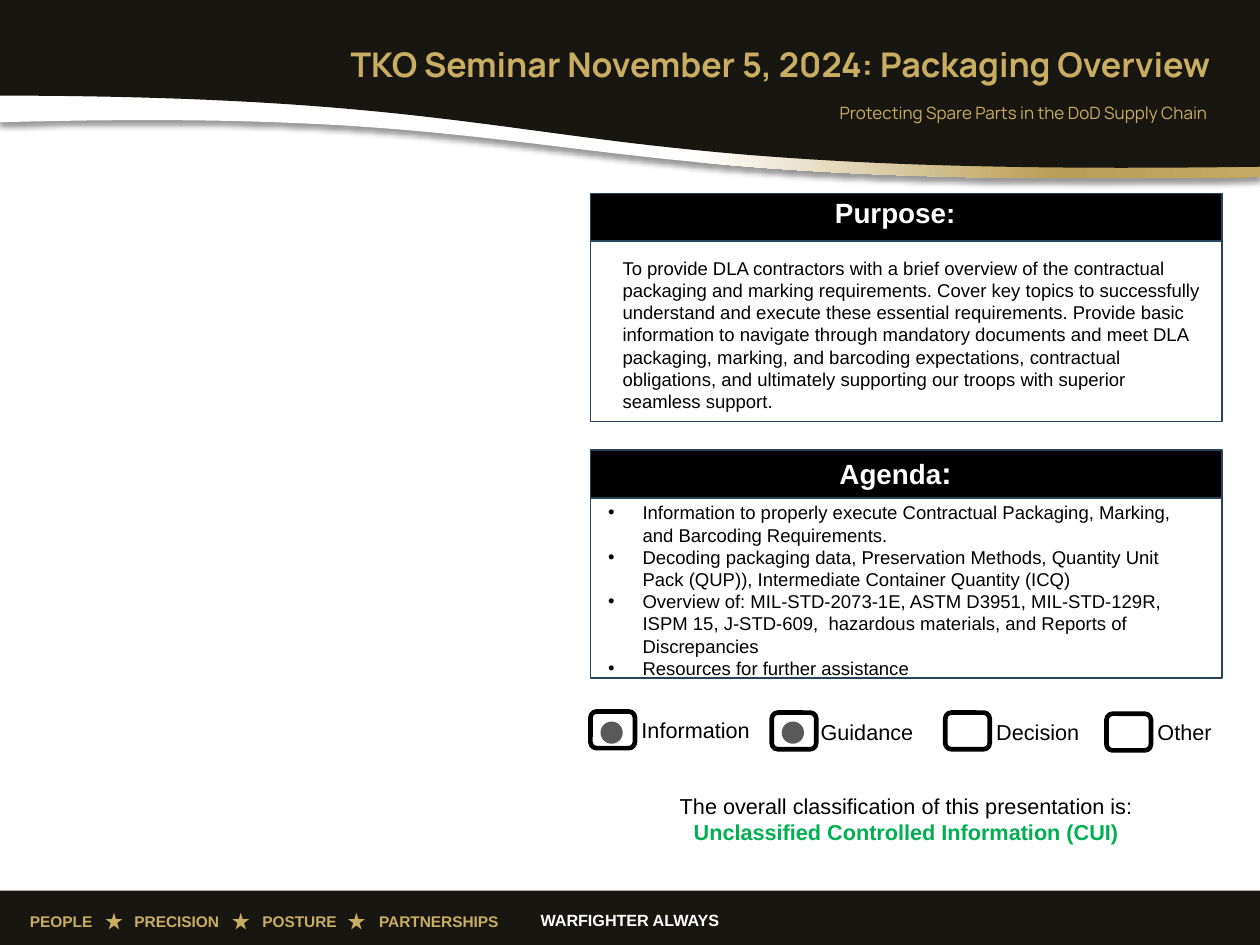
import copy

import lxml.etree
import pptx
import pptx.dml.color
import pptx.enum.shapes
import pptx.enum.text
import pptx.oxml.ns
import pptx.util

Inches = pptx.util.Inches
Kind = pptx.enum.shapes.MSO_SHAPE
Align = pptx.enum.text.PP_ALIGN
Anchor = pptx.enum.text.MSO_ANCHOR
qn = pptx.oxml.ns.qn

WIDE, HIGH = 11.33, 8.5
GOLD, DARK, NAVY = "C9AD62", "171610", "28445D"
PANEL_X, PANEL_W = 5.31, 5.68

PURPOSE = (
    "To provide DLA contractors with a brief overview of the contractual packaging "
    "and marking requirements. Cover key topics to successfully understand and execute "
    "these essential requirements. Provide basic information to navigate through "
    "mandatory documents and meet DLA packaging, marking, and barcoding expectations, "
    "contractual obligations, and ultimately supporting our troops with superior "
    "seamless support."
)
AGENDA = (
    "Information to properly execute Contractual Packaging, Marking, and Barcoding "
    "Requirements.",
    "Decoding packaging data, Preservation Methods, Quantity Unit Pack (QUP)), "
    "Intermediate Container Quantity (ICQ)",
    "Overview of: MIL-STD-2073-1E, ASTM D3951, MIL-STD-129R, ISPM 15, J-STD-609,  "
    "hazardous materials, and Reports of Discrepancies",
    "Resources for further assistance",
)
CHOICES = (
    ("Information", 5.31, 6.4, 5.67, 1.2, True),
    ("Guidance", 6.94, 6.41, 7.28, 1.19, True),
    ("Decision", 8.5, 6.41, 8.86, 1, False),
    ("Other", 9.95, 6.42, 10.31, 0.73, False),
)


def paint(code):
    """Turn a hex string into a colour."""
    return pptx.dml.color.RGBColor.from_string(code)


def node(root, tag, **attrs):
    """Add a drawing element under a root."""
    return lxml.etree.SubElement(root, qn(tag), {k: str(v) for k, v in attrs.items()})


def style(font, size, color, bold=False, face="Arial"):
    """Set the look of a font."""
    font.size, font.bold, font.name = pptx.util.Pt(size), bold, face
    font.color.rgb = paint(color)


def write(slide, box, *paras, align=Align.LEFT, anchor=Anchor.TOP, space=None,
          bullet=None, tabs=(), **look):
    """Add a text box whose paragraphs are strings or lists of (words, look) runs."""
    frame = slide.shapes.add_textbox(*map(Inches, box)).text_frame
    frame.word_wrap, frame.vertical_anchor = True, anchor
    for i, runs in enumerate(paras):
        para = frame.add_paragraph() if i else frame.paragraphs[0]
        para.alignment = align
        if space:
            para.line_spacing = space
        props = para._p.get_or_add_pPr()
        if bullet:
            props.set("marL", str(Inches(0.31)))
            props.set("indent", str(Inches(-0.31)))
            node(props, "a:buFont", typeface="Arial")
            node(props, "a:buChar", char=bullet)
        if tabs:
            stops = node(props, "a:tabLst")
            for stop in tabs:
                node(stops, "a:tab", pos=Inches(stop), algn="l")
        for words, extra in [(runs, {})] if isinstance(runs, str) else runs:
            run = para.add_run()
            run.text = words
            style(run.font, **{**look, **extra})


def draw(slide, kind, box, fill=None, line=None, width=1):
    """Add a preset shape."""
    shape = slide.shapes.add_shape(kind, *map(Inches, box))
    shape.shadow.inherit = False
    if fill:
        shape.fill.solid()
        shape.fill.fore_color.rgb = paint(fill)
    else:
        shape.fill.background()
    if line:
        shape.line.color.rgb = paint(line)
        shape.line.width = pptx.util.Pt(width)
    else:
        shape.line.fill.background()


def wave(slide, top, *knots):
    """Add a band from a top edge down to a cubic curve."""
    points = []
    for i in range(61):
        t = i / 60
        parts = (1 - t) ** 3, 3 * t * (1 - t) ** 2, 3 * t * t * (1 - t), t ** 3
        points.append(tuple(Inches(sum(p * k[axis] for p, k in zip(parts, knots)))
                            for axis in (0, 1)))
    maker = slide.shapes.build_freeform(Inches(WIDE), Inches(top))
    maker.add_line_segments([(0, Inches(top))] + points, close=True)
    shape = maker.convert_to_shape()
    shape.line.fill.background()
    shape.shadow.inherit = False
    return shape


def header(slide):
    """Draw the curved header with its titles."""
    edge = wave(slide, 0.59, (0, 1.1), (5.49, 0.95), (4.54, 1.72), (WIDE, 1.59))
    edge.fill.gradient()
    edge.fill.gradient_angle = 0
    props = edge._element.spPr
    stops = props.find(".//" + qn("a:gsLst"))
    stops.append(copy.deepcopy(stops[-1]))
    shades = (0.55, "FFFFFF"), (0.84, "B99E55"), (1, "C7AA61")
    for stop, (place, code) in zip(edge.fill.gradient_stops, shades):
        stop.position, stop.color.rgb = place, paint(code)
    shade = node(props.find(qn("a:effectLst")), "a:outerShdw", blurRad=pptx.util.Pt(4),
                 dist=pptx.util.Pt(3), dir=5400000, algn="t", rotWithShape=0)
    node(node(shade, "a:srgbClr", val="000000"), "a:alpha", val=40000)

    band = wave(slide, 0, (0, 0.86), (5.46, 0.87), (4.52, 1.6), (WIDE, 1.5))
    band.fill.solid()
    band.fill.fore_color.rgb = paint(DARK)
    write(slide, (2.66, 0.34, 8.32, 0.47), "TKO Seminar November 5, 2024: Packaging Overview",
          size=22, color=GOLD, bold=True, face="Manrope", align=Align.RIGHT,
          anchor=Anchor.MIDDLE)
    write(slide, (6.35, 0.89, 4.64, 0.47), "Protecting Spare Parts in the DoD Supply Chain ",
          size=11, color=GOLD, face="Manrope", align=Align.RIGHT, space=0.9)


def footer(slide):
    """Draw the footer with its motto."""
    draw(slide, Kind.RECTANGLE, (0, 8.01, WIDE, HIGH - 8.01), DARK)
    write(slide, (4.47, 8.14, 2.39, 0.28), "WARFIGHTER ALWAYS",
          size=10.5, color="FFFFFF", bold=True, align=Align.CENTER)
    write(slide, (0.17, 8.15, 4.61, 0.28), "PEOPLE\tPRECISION\tPOSTURE\tPARTNERSHIPS",
          size=10, color=GOLD, bold=True, tabs=(0.94, 2.09, 3.14))
    for x in (0.95, 2.09, 3.13):
        draw(slide, Kind.STAR_5_POINT, (x, 8.21, 0.15, 0.15), GOLD)


def panel(slide, top, label, title):
    """Draw a panel with a black title bar."""
    draw(slide, Kind.RECTANGLE, (PANEL_X, top + 0.43, PANEL_W, 1.62), "FFFFFF", NAVY)
    draw(slide, Kind.RECTANGLE, (PANEL_X, top, PANEL_W, 0.43), "000000", NAVY)
    write(slide, label, title, size=18, color="FFFFFF", bold=True)


def choice(slide, name, x, y, left, width, picked):
    """Draw a check box with its label."""
    draw(slide, Kind.ROUNDED_RECTANGLE, (x, y, 0.4, 0.33), line="000000", width=3)
    write(slide, (left, 6.4 if x == PANEL_X else 6.42, width, 0.34), name,
          size=14, color="000000")
    if picked:
        draw(slide, Kind.OVAL, (x + 0.09, 6.49, 0.2, 0.2), "595959")


def main():
    """Build the slide and save it."""
    deck = pptx.Presentation()
    deck.slide_width, deck.slide_height = Inches(WIDE), Inches(HIGH)
    slide = deck.slides.add_slide(deck.slide_layouts[6])
    header(slide)
    footer(slide)
    panel(slide, 1.74, (7.41, 1.71, 1.49, 0.4), "Purpose:")
    write(slide, (5.5, 2.26, 5.44, 1.51), PURPOSE, size=12, color="000000")
    panel(slide, 4.05, (7.45, 4.03, 1.39, 0.44), [("Agenda", {}), (":", {"size": 20})])
    write(slide, (5.37, 4.46, 5.44, 1.92), *AGENDA, size=12, color="000000", bullet="•")
    for item in CHOICES:
        choice(slide, *item)
    mark = [("Unclassified Controlled Information (CUI)", {"color": "00B050", "bold": True})]
    write(slide, (PANEL_X, 7.08, PANEL_W, 0.57),
          "The overall classification of this presentation is:", mark,
          size=14, color="000000", align=Align.CENTER)
    deck.save("out.pptx")


if __name__ == "__main__":
    main()
